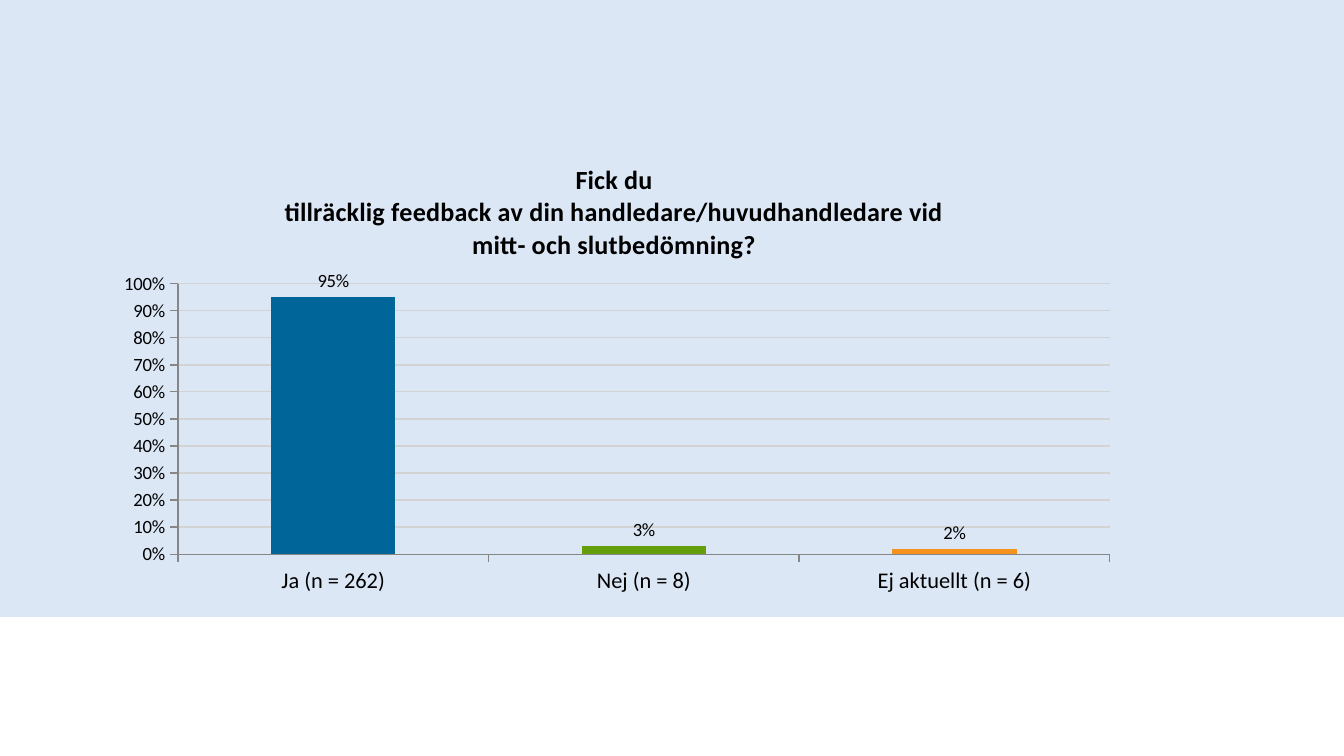
from lxml import etree
from pptx import Presentation
from pptx.chart.data import CategoryChartData
from pptx.dml.color import RGBColor
from pptx.enum.chart import XL_CHART_TYPE, XL_LABEL_POSITION, XL_TICK_MARK
from pptx.enum.shapes import MSO_SHAPE
from pptx.oxml.ns import qn
from pptx.util import Pt

COLUMN = XL_CHART_TYPE.COLUMN_CLUSTERED
OUT_END = XL_LABEL_POSITION.OUTSIDE_END
OUTSIDE = XL_TICK_MARK.OUTSIDE
RECT = MSO_SHAPE.RECTANGLE

PALE = RGBColor(0xDC, 0xE7, 0xF6)
BLACK = RGBColor(0, 0, 0)
GRID = RGBColor(0xD3, 0xD3, 0xD3)
AXIS = RGBColor(0x86, 0x86, 0x86)
BLUE = RGBColor(0x00, 0x66, 0x99)
GREEN = RGBColor(0x64, 0x9E, 0x0B)
ORANGE = RGBColor(0xF6, 0x92, 0x1E)

TITLE = ("Fick du\n"
         "tillräcklig feedback av din handledare/huvudhandledare vid\n"
         "mitt- och slutbedömning?")
ANSWERS = [("Ja (n = 262)", 0.95, BLUE),
           ("Nej (n = 8)", 0.03, GREEN),
           ("Ej aktuellt (n = 6)", 0.02, ORANGE)]


def style(font, size, bold=False):
    form = {"name": "Calibri", "size": Pt(size), "bold": bold}
    for key, value in form.items():
        setattr(font, key, value)
    font.color.rgb = BLACK


def place(layout, values):
    """Fill a chart layout element with manual settings."""
    manual = etree.SubElement(layout, qn("c:manualLayout"))
    for key, value in values.items():
        etree.SubElement(manual, qn(f"c:{key}")).set("val", str(value))


prs = Presentation()
prs.slide_width, prs.slide_height = Pt(720), Pt(405)
slide = prs.slides.add_slide(prs.slide_layouts[6])

# Pale panel behind the chart
panel = slide.shapes.add_shape(RECT, 0, 0, Pt(720), Pt(330.5))
panel.shadow.inherit = False
panel.fill.solid()
panel.fill.fore_color.rgb = PALE
panel.line.fill.background()

# Chart
data = CategoryChartData(number_format="0%")
data.categories = [name for name, _, _ in ANSWERS]
data.add_series("Series 1", [share for _, share, _ in ANSWERS])
chart = slide.shapes.add_chart(
    COLUMN, Pt(57), Pt(72), Pt(548.5), Pt(250), data).chart
style(chart.font, 18)
chart.has_legend = False

title = chart.chart_title
title.text_frame.text = TITLE
title.include_in_layout = False
for para in title.text_frame.paragraphs:
    style(para.font, 14, True)
    for run in para.runs:
        style(run.font, 14, True)

# Axes
for axis, size in ((chart.category_axis, 12), (chart.value_axis, 10)):
    axis.major_tick_mark = OUTSIDE
    axis.format.line.color.rgb = AXIS
    axis.format.line.width = Pt(0.75)
    style(axis.tick_labels.font, size)

scale = chart.value_axis
form = {"minimum_scale": 0, "maximum_scale": 1, "major_unit": 0.1,
        "has_major_gridlines": True}
for key, value in form.items():
    setattr(scale, key, value)
scale.tick_labels.number_format = "0%"
scale.tick_labels.number_format_is_linked = False
scale.major_gridlines.format.line.color.rgb = GRID
scale.major_gridlines.format.line.width = Pt(0.75)

# Columns and their labels
plot = chart.plots[0]
plot.gap_width = 150
plot.vary_by_categories = False
bars = plot.series[0]
bars.format.fill.solid()
bars.format.fill.fore_color.rgb = BLUE
for i, (_, _, color) in enumerate(ANSWERS[1:], 1):
    fill = bars.points[i].format.fill
    fill.solid()
    fill.fore_color.rgb = color

labels = bars.data_labels
form = {"show_value": True, "position": OUT_END, "number_format": "0%",
        "number_format_is_linked": False}
for key, value in form.items():
    setattr(labels, key, value)
style(labels.font, 10)

# Plot area inside the chart
area = plot._element.getparent()
layout = area.find(qn("c:layout"))
if layout is None:
    layout = etree.Element(qn("c:layout"))
    area.insert(0, layout)
place(layout, {"layoutTarget": "inner", "xMode": "edge", "yMode": "edge",
               "x": 0.07, "y": 0.32, "w": 0.91, "h": 0.58})

# Title position inside the chart
head = title._element.find(qn("c:layout"))
if head is None:
    head = etree.Element(qn("c:layout"))
    title._element.find(qn("c:tx")).addnext(head)
place(head, {"xMode": "edge", "yMode": "edge", "x": 0.17, "y": 0.05})

prs.save("out.pptx")
